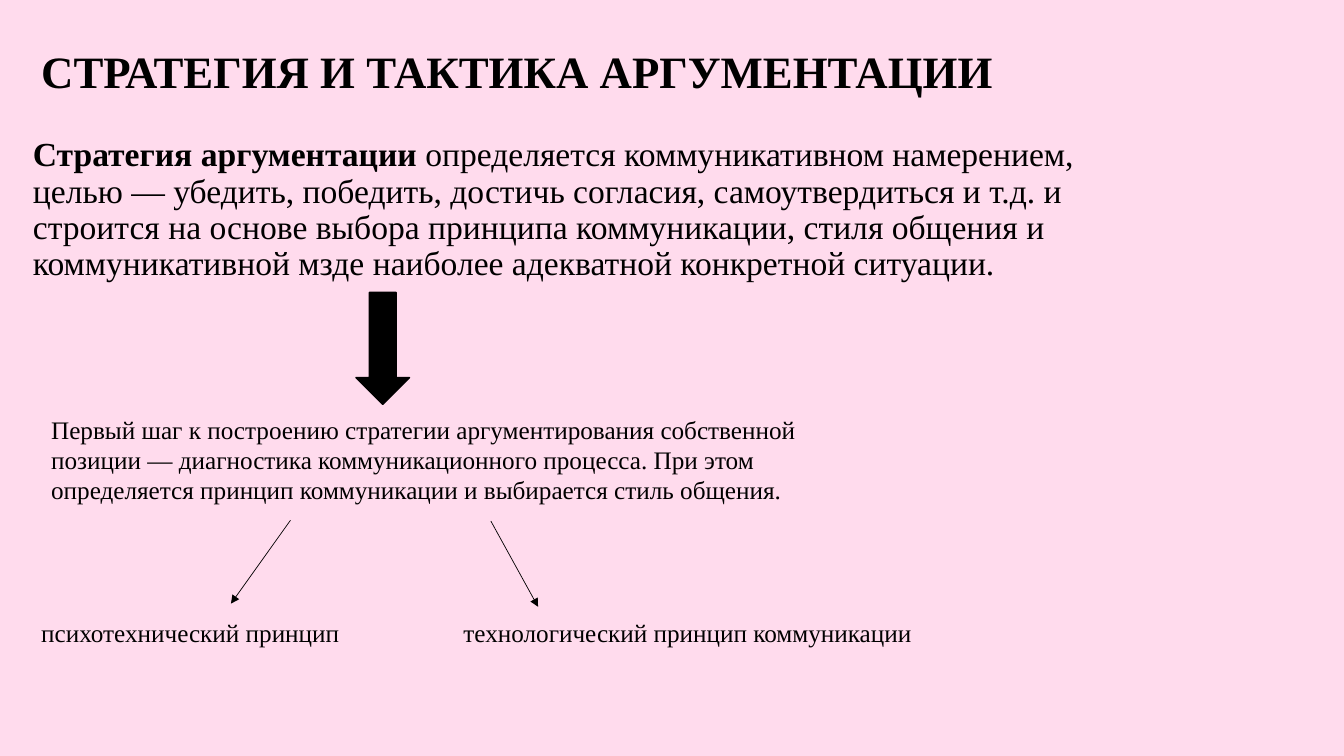
"""Builds the slide on the strategy and tactics of argumentation."""
from lxml import etree
from pptx import Presentation
from pptx import util as u
from pptx.dml.color import RGBColor
from pptx.enum import shapes, text
from pptx.oxml.ns import qn

BLACK = "000000"
PINK = "FFDBED"


def paint(color, value):
    """Set a colour from a hex string."""
    color.rgb = RGBColor.from_string(value)


def add_text(page, place, spans, size, spacing=1.0, anchor=text.MSO_ANCHOR.TOP):
    """Add a wrapped paragraph of (wording, bold) spans."""
    box = page.shapes.add_textbox(*map(u.Cm, place))
    frame = box.text_frame
    frame.word_wrap = True
    frame.vertical_anchor = anchor
    para = frame.paragraphs[0]
    para.line_spacing = spacing
    para.font.name = "Times New Roman"
    para.font.size = u.Pt(size)
    paint(para.font.color, BLACK)
    for wording, bold in spans:
        span = para.add_run()
        span.text = wording
        span.font.bold = bold


def add_block_arrow(page, place):
    """Add a solid arrow pointing down."""
    arrow = page.shapes.add_shape(shapes.MSO_SHAPE.DOWN_ARROW, *map(u.Cm, place))
    arrow.shadow.inherit = False
    arrow.fill.solid()
    paint(arrow.fill.fore_color, BLACK)
    paint(arrow.line.color, BLACK)
    arrow.line.width = u.Pt(1)


def add_thin_arrow(page, ends):
    """Add a thin line with an arrowhead at its end."""
    line = page.shapes.add_connector(shapes.MSO_CONNECTOR.STRAIGHT, *map(u.Cm, ends))
    paint(line.line.color, BLACK)
    line.line.width = u.Pt(0.5)
    etree.SubElement(line.line._get_or_add_ln(), qn("a:tailEnd"), type="triangle")
    etree.SubElement(line._element.spPr, qn("a:effectLst"))


def main():
    """Build and save the deck."""
    deck = Presentation()
    deck.slide_width, deck.slide_height = u.Cm(33.87), u.Cm(19.05)
    page = deck.slides.add_slide(deck.slide_layouts[6])
    page.background.fill.solid()
    paint(page.background.fill.fore_color, PINK)

    add_text(page, (0.79, 0.84, 29.21, 2.03),
             [("СТРАТЕГИЯ И ТАКТИКА АРГУМЕНТАЦИИ", True)],
             32, 0.9, text.MSO_ANCHOR.MIDDLE)
    add_text(page, (0.58, 3.35, 29.21, 12.09), [
        ("Стратегия аргументации ", True),
        ("определяется коммуникативном намерением, целью — убедить, победить, "
         "достичь согласия, самоутвердиться и т.д. и строится на основе выбора "
         "принципа коммуникации, стиля общения и коммуникативной мзде наиболее "
         "адекватной конкретной ситуации.", False),
    ], 24, 0.9)
    add_block_arrow(page, (8.97, 7.37, 1.35, 2.82))
    add_text(page, (1.04, 10.31, 20.68, 3.33), [
        ("Первый шаг к построению стратегии аргументирования собственной позиции — "
         "диагностика коммуникационного процесса. При этом определяется принцип "
         "коммуникации и выбирается стиль общения.", False),
    ], 18)

    for left, width, principle, ends in (
        (0.79, 9, "психотехнический принцип", (7.32, 13.11, 5.82, 15.21)),
        (11.43, 13.67, "технологический принцип коммуникации",
         (12.37, 13.13, 13.56, 15.29)),
    ):
        add_text(page, (left, 15.44, width, 1.1), [(principle, False)], 18)
        add_thin_arrow(page, ends)

    deck.save("out.pptx")


if __name__ == "__main__":
    main()
